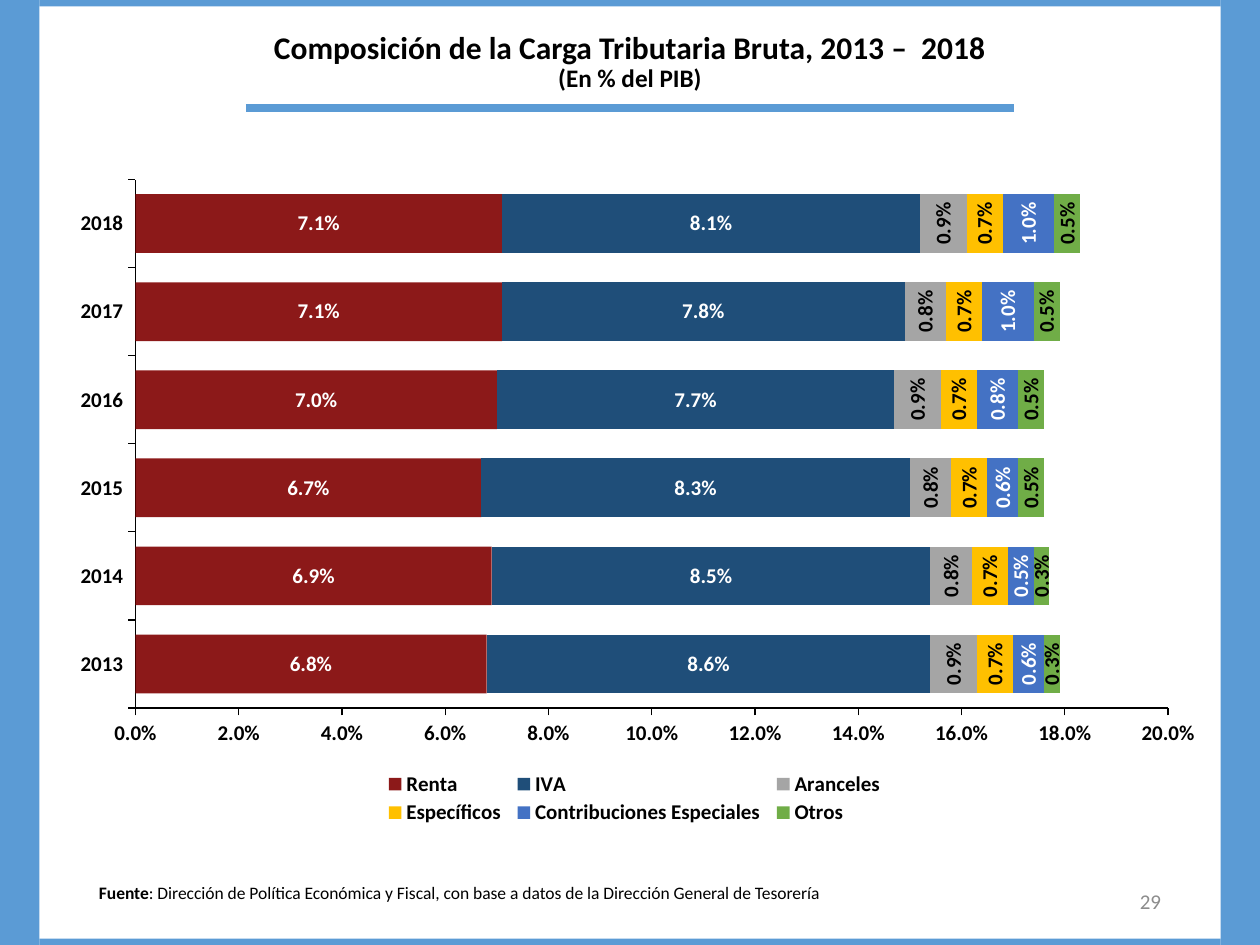
"""Build the slide on the composition of the gross tax burden, 2013 to 2018."""
from lxml.etree import SubElement
from pptx import Presentation
from pptx.chart.data import CategoryChartData
from pptx.dml.color import RGBColor
from pptx.enum.chart import XL_CHART_TYPE, XL_LABEL_POSITION, XL_LEGEND_POSITION, XL_TICK_MARK
from pptx.enum.shapes import MSO_CONNECTOR, MSO_SHAPE
from pptx.enum.text import MSO_ANCHOR, PP_ALIGN
from pptx.oxml import parse_xml
from pptx.oxml.ns import nsdecls, qn
from pptx.util import Pt

BLACK = RGBColor(0x00, 0x00, 0x00)
WHITE = RGBColor(0xFF, 0xFF, 0xFF)
GREY = RGBColor(0x8C, 0x8C, 0x8C)
FRAME_BLUE = RGBColor(0x5B, 0x9B, 0xD5)
MAROON = RGBColor(0x80, 0x00, 0x00)
NAVY = RGBColor(0x1F, 0x4E, 0x79)
SILVER = RGBColor(0xA5, 0xA5, 0xA5)
GOLD = RGBColor(0xFF, 0xC0, 0x00)
BLUE = RGBColor(0x44, 0x72, 0xC4)
GREEN = RGBColor(0x70, 0xAD, 0x47)

WIDTH, HEIGHT = 720, 540
SIDE, EDGE = 22.5, 3.6
YEARS = ["2013", "2014", "2015", "2016", "2017", "2018"]
TAXES = [
    ("Renta", MAROON, WHITE, [0.068, 0.069, 0.067, 0.070, 0.071, 0.071]),
    ("IVA", NAVY, WHITE, [0.086, 0.085, 0.083, 0.077, 0.078, 0.081]),
    ("Aranceles", SILVER, BLACK, [0.009, 0.008, 0.008, 0.009, 0.008, 0.009]),
    ("Específicos", GOLD, BLACK, [0.007, 0.007, 0.007, 0.007, 0.007, 0.007]),
    ("Contribuciones Especiales", BLUE, WHITE, [0.006, 0.005, 0.006, 0.008, 0.010, 0.010]),
    ("Otros", GREEN, BLACK, [0.003, 0.003, 0.005, 0.005, 0.005, 0.005]),
]


def assign(target, values):
    for name, value in values.items():
        setattr(target, name, value)


def manual_layout(inner, **fractions):
    target = '<c:layoutTarget val="inner"/>' if inner else ""
    modes = '<c:xMode val="edge"/><c:yMode val="edge"/>'
    places = "".join(f'<c:{key} val="{value}"/>' for key, value in fractions.items())
    return parse_xml(
        f'<c:layout {nsdecls("c")}><c:manualLayout>{target}{modes}{places}</c:manualLayout></c:layout>'
    )


class SlideBuilder:
    def __init__(self, slide, font_name="Calibri"):
        self.slide = slide
        self.font_name = font_name

    def style(self, font, size, color=BLACK, bold=False):
        assign(font, {"name": self.font_name, "size": Pt(size), "bold": bold})
        font.color.rgb = color

    def run(self, paragraph, words, size, **look):
        run = paragraph.add_run()
        run.text = words
        self.style(run.font, size, **look)

    def band(self, left, top, width, height):
        band = self.slide.shapes.add_shape(
            MSO_SHAPE.RECTANGLE, Pt(left), Pt(top), Pt(width), Pt(height)
        )
        band.shadow.inherit = False
        band.fill.solid()
        band.fill.fore_color.rgb = FRAME_BLUE
        band.line.fill.background()

    def rule(self, left, right, top):
        rule = self.slide.shapes.add_connector(
            MSO_CONNECTOR.STRAIGHT, Pt(left), Pt(top), Pt(right), Pt(top)
        )
        rule.line.color.rgb = FRAME_BLUE
        rule.line.width = Pt(4.5)
        SubElement(rule.element.spPr, qn("a:effectLst"))

    def title(self, heading, unit):
        title = self.slide.shapes.title
        assign(title, {"left": Pt(49.5), "top": Pt(17.3), "width": Pt(621), "height": Pt(54.7)})
        assign(title.text_frame, {
            "word_wrap": True, "vertical_anchor": MSO_ANCHOR.TOP, "margin_top": Pt(1),
        })
        paragraph = title.text_frame.paragraphs[0]
        assign(paragraph, {"alignment": PP_ALIGN.CENTER, "line_spacing": 0.9})
        self.run(paragraph, heading, 18, bold=True)
        paragraph.add_line_break()
        self.run(paragraph, unit, 14.4, bold=True)

    def text(self, left, top, width, height, alignment, anchor):
        box = self.slide.shapes.add_textbox(Pt(left), Pt(top), Pt(width), Pt(height))
        assign(box.text_frame, {"word_wrap": True, "vertical_anchor": anchor})
        paragraph = box.text_frame.paragraphs[0]
        paragraph.alignment = alignment
        return paragraph

    def axis(self, axis):
        assign(axis, {
            "has_major_gridlines": False,
            "major_tick_mark": XL_TICK_MARK.OUTSIDE,
            "minor_tick_mark": XL_TICK_MARK.NONE,
        })
        self.style(axis.tick_labels.font, 12, bold=True)
        axis.format.line.color.rgb = BLACK
        axis.format.line.width = Pt(0.75)

    def stacked_bars(self, left, top, width, height):
        burden = CategoryChartData(number_format="0.0%")
        burden.categories = YEARS
        for name, _, _, shares in TAXES:
            burden.add_series(name, shares)
        chart = self.slide.shapes.add_chart(
            XL_CHART_TYPE.BAR_STACKED, Pt(left), Pt(top), Pt(width), Pt(height), burden
        ).chart
        self.style(chart.font, 10)
        assign(chart, {"has_title": False, "has_legend": True})
        assign(chart.legend, {"position": XL_LEGEND_POSITION.BOTTOM, "include_in_layout": False})
        self.style(chart.legend.font, 12, bold=True)

        self.axis(chart.category_axis)
        self.axis(chart.value_axis)
        assign(chart.value_axis, {"minimum_scale": 0, "maximum_scale": 0.2, "major_unit": 0.02})
        assign(chart.value_axis.tick_labels, {"number_format": "0.0%", "number_format_is_linked": False})

        plot = chart.plots[0]
        assign(plot, {"gap_width": 50, "overlap": 100, "vary_by_categories": False})
        for series, (_, fill, label, _) in zip(plot.series, TAXES):
            series.format.fill.solid()
            series.format.fill.fore_color.rgb = fill
            assign(series.data_labels, {
                "show_value": True, "position": XL_LABEL_POSITION.CENTER,
                "number_format": "0.0%", "number_format_is_linked": False,
            })
            self.style(series.data_labels.font, 12, color=label, bold=True)
        self.refine(chart.element)

    def refine(self, root):
        maroon = root.xpath(".//c:ser[1]/c:spPr/a:solidFill/a:srgbClr")[0]
        SubElement(maroon, qn("a:alpha")).set("val", "90000")
        for body in root.xpath(".//c:ser[position()>2]/c:dLbls/c:txPr/a:bodyPr"):
            body.set("rot", "-5400000")
            body.set("vert", "horz")
        for automatic in root.xpath(".//c:plotArea/c:layout | .//c:legend/c:layout"):
            automatic.getparent().remove(automatic)
        plot_area = root.xpath(".//c:plotArea")[0]
        plot_area.insert(0, manual_layout(True, x=0.07, y=0.02, w=0.89, h=0.79))
        legend_position = root.xpath(".//c:legend/c:legendPos")[0]
        legend_position.addnext(manual_layout(False, x=0.28, y=0.9, w=0.44, h=0.09))


def main():
    deck = Presentation()
    assign(deck, {"slide_width": Pt(WIDTH), "slide_height": Pt(HEIGHT)})
    builder = SlideBuilder(deck.slides.add_slide(deck.slide_layouts[5]))
    for left in (0, WIDTH - SIDE):
        builder.band(left, 0, SIDE, HEIGHT)
    for top in (0, HEIGHT - EDGE):
        builder.band(SIDE, top, WIDTH - 2 * SIDE, EDGE)
    builder.rule(140.5, 579.5, 61.9)
    builder.title("Composición de la Carga Tributaria Bruta, 2013 –  2018", "(En % del PIB)")
    builder.stacked_bars(31, 95, 663, 382.3)
    number = builder.text(508.5, 500.5, 162, 28.7, PP_ALIGN.RIGHT, MSO_ANCHOR.MIDDLE)
    builder.run(number, "29", 12, color=GREY)
    source = builder.text(49.5, 500.5, 594.7, 19.4, PP_ALIGN.JUSTIFY, MSO_ANCHOR.TOP)
    builder.run(source, "Fuente", 10, bold=True)
    builder.run(
        source,
        ": Dirección de Política Económica y Fiscal, con base a datos de la Dirección General de Tesorería",
        10,
    )
    deck.save("out.pptx")


if __name__ == "__main__":
    main()
